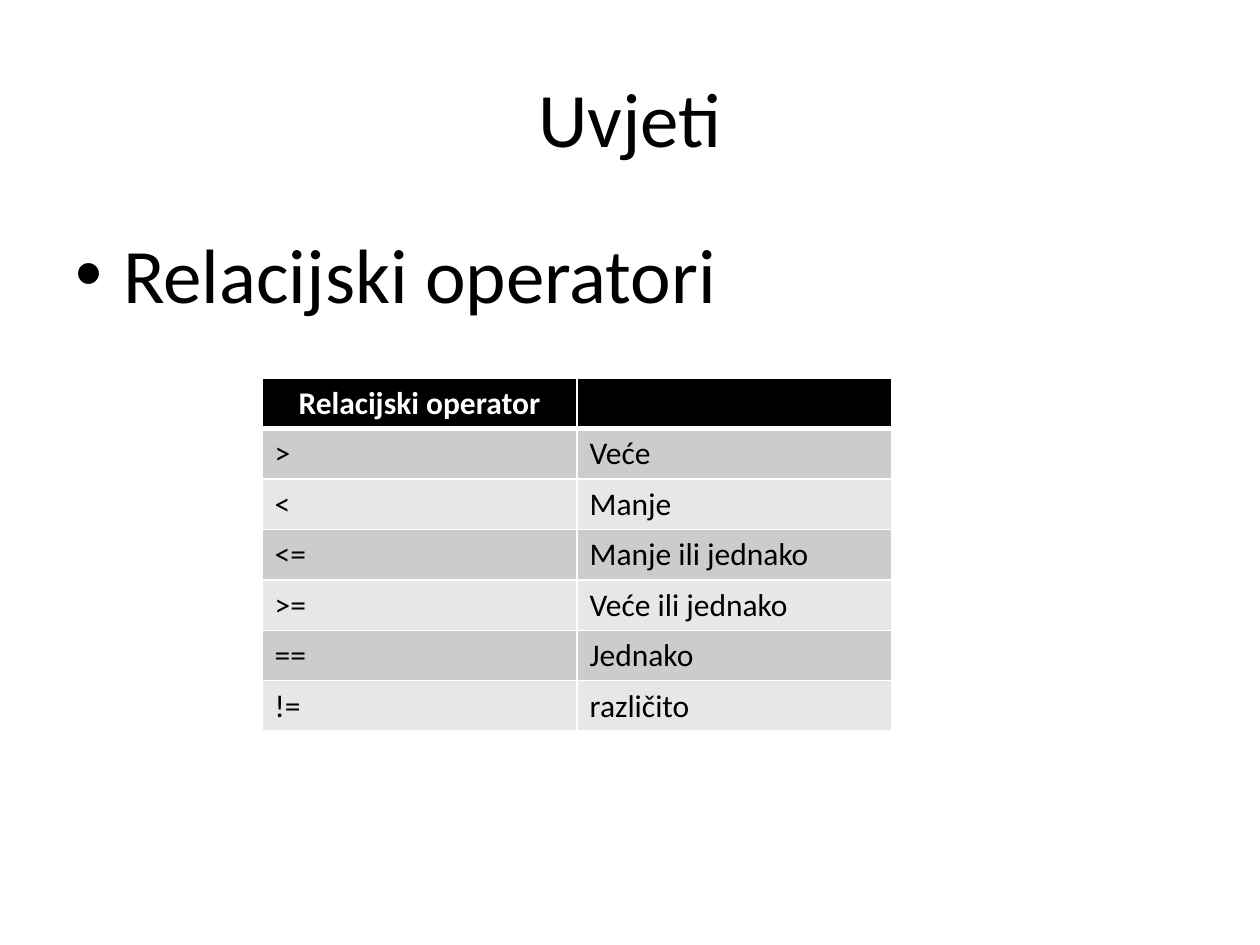
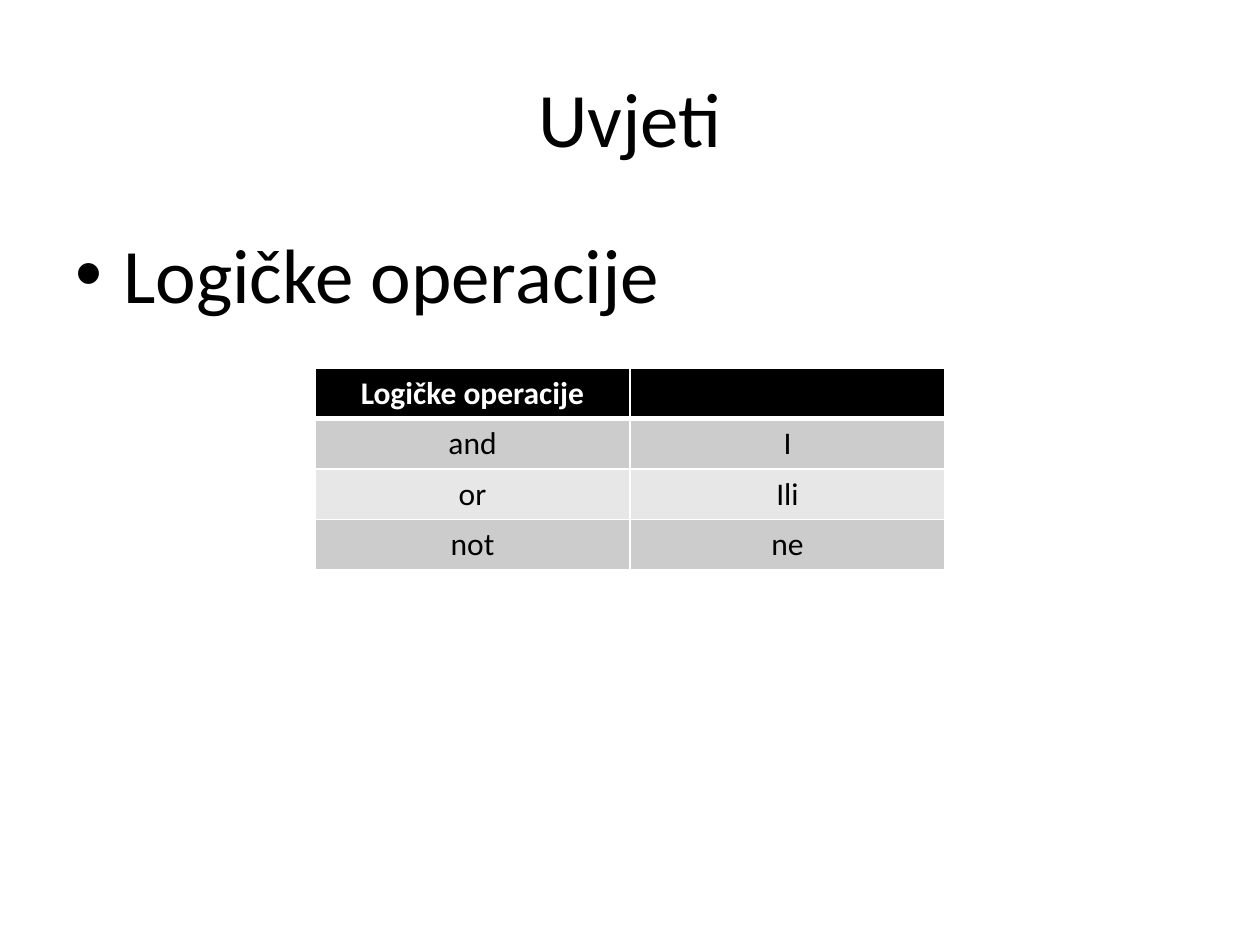
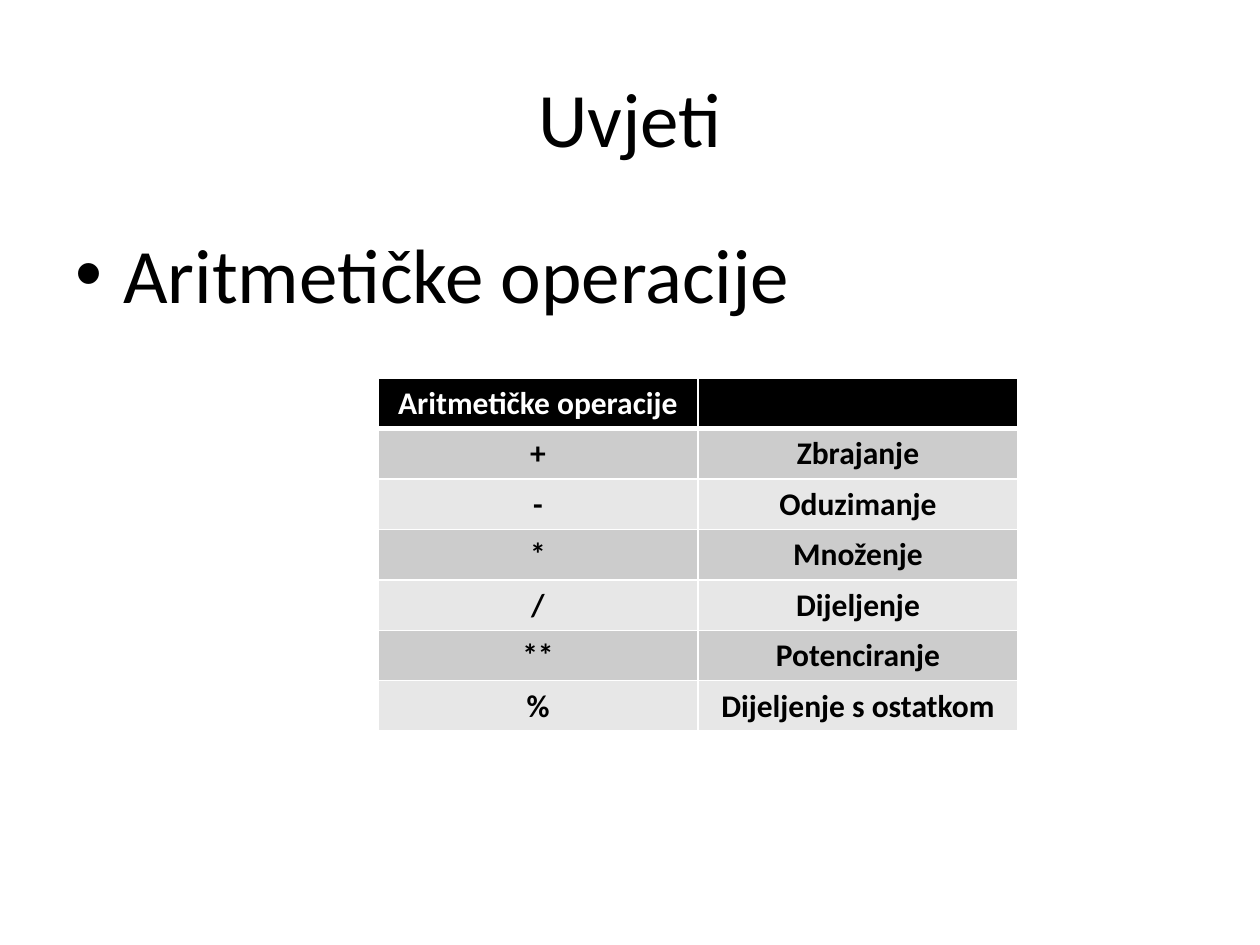
import pptx
import pptx.dml.color
import pptx.enum.text
import pptx.oxml
import pptx.oxml.ns
import pptx.util
from pptx.util import Inches

FONT = "Calibri"
BLACK, WHITE = "000000", "FFFFFF"
BANDS = ("CCCCCC", "E7E7E7")
LEFT = pptx.enum.text.PP_ALIGN.LEFT
CENTER = pptx.enum.text.PP_ALIGN.CENTER
TITLE_BOX = (0.5, 0.3, 9, 1.25)
BODY_BOX = (0.5, 1.75, 9, 4.95)
ROW_HEIGHT = 0.4
INDENT = 0.38

SLIDES = [
    {"topic": "Relacijski operatori", "box": (2.08, 3, 5), "align": LEFT, "bold": False,
     "rows": [("Relacijski operator", ""), (">", "Veće"), ("<", "Manje"),
              ("<=", "Manje ili jednako"), (">=", "Veće ili jednako"),
              ("==", "Jednako"), ("!=", "različito")]},
    {"topic": "Logičke operacije", "box": (2.5, 2.92, 5), "align": CENTER, "bold": False,
     "rows": [("Logičke operacije", ""), ("and", "I"), ("or", "Ili"), ("not", "ne")]},
    {"topic": "Aritmetičke operacije", "box": (3, 3, 5.08), "align": CENTER, "bold": True,
     "rows": [("Aritmetičke operacije", ""), ("+", "Zbrajanje"), ("-", "Oduzimanje"),
              ("*", "Množenje"), ("/", "Dijeljenje"), ("**", "Potenciranje"),
              ("%", "Dijeljenje s ostatkom")]},
]


def rgb(color):
    """Turn a hex string into a colour."""
    return pptx.dml.color.RGBColor.from_string(color)


def add_run(p, text, size, color=BLACK, bold=False):
    """Append a formatted run to a paragraph."""
    r = p.add_run()
    r.text = text
    r.font.name = FONT
    r.font.size = pptx.util.Pt(size)
    r.font.bold = bold
    r.font.color.rgb = rgb(color)


def add_text(s, box, text, align, anchor):
    """Place a large wrapped line in a box and return its paragraph."""
    tf = s.shapes.add_textbox(*map(Inches, box)).text_frame
    tf.word_wrap = True
    tf.vertical_anchor = anchor
    p = tf.paragraphs[0]
    p.alignment = align
    add_run(p, text, 44)
    return p


def add_title(s, box):
    """Place the shared title."""
    add_text(s, box, "Uvjeti", CENTER, pptx.enum.text.MSO_ANCHOR.MIDDLE)


def add_topic(s, box, text):
    """Place the bulleted topic line."""
    p = add_text(s, box, text, LEFT, pptx.enum.text.MSO_ANCHOR.TOP)
    pPr = p._p.get_or_add_pPr()
    pPr.set("marL", str(Inches(INDENT)))
    pPr.set("indent", str(-Inches(INDENT)))
    ns = pptx.oxml.ns.nsdecls("a")
    pPr.append(pptx.oxml.parse_xml(f'<a:buFont {ns} typeface="Arial"/>'))
    pPr.append(pptx.oxml.parse_xml(f'<a:buChar {ns} char="•"/>'))


def set_borders(cell, widths):
    """Draw white cell borders, with widths in points keyed by side."""
    tcPr = cell._tc.get_or_add_tcPr()
    ns = pptx.oxml.ns.nsdecls("a")
    for i, (side, width) in enumerate(widths.items()):
        tcPr.insert(i, pptx.oxml.parse_xml(
            f'<a:ln{side} {ns} w="{pptx.util.Pt(width)}"><a:solidFill>'
            f'<a:srgbClr val="{WHITE}"/></a:solidFill></a:ln{side}>'))


def add_operator_table(s, box, rows, align, bold):
    """Place a banded two-column table with a black header row."""
    left, top, width = box
    table = s.shapes.add_table(len(rows), 2, Inches(left), Inches(top), Inches(width),
                               Inches(ROW_HEIGHT * len(rows))).table
    table.horz_banding = False
    for i, row in enumerate(rows):
        header = i == 0
        for j, text in enumerate(row):
            cell = table.cell(i, j)
            cell.fill.solid()
            cell.fill.fore_color.rgb = rgb(BLACK if header else BANDS[(i - 1) % 2])
            set_borders(cell, {"L": 1, "R": 1, "T": 3 if i == 1 else 1, "B": 3 if header else 1})
            p = cell.text_frame.paragraphs[0]
            p.alignment = CENTER if header else align
            if text:
                add_run(p, text, 18, WHITE if header else BLACK, header or bold)


def add_operator_slide(prs, topic, box, rows, align, bold):
    """Add a slide with title, topic and operator table."""
    s = prs.slides.add_slide(prs.slide_layouts[6])
    add_title(s, TITLE_BOX)
    add_topic(s, BODY_BOX, topic)
    add_operator_table(s, box, rows, align, bold)


def main():
    """Build and save the presentation."""
    prs = pptx.Presentation()
    prs.slide_width, prs.slide_height = Inches(10), Inches(7.5)
    for content in SLIDES:
        add_operator_slide(prs, **content)
    prs.save("out.pptx")


if __name__ == "__main__":
    main()
